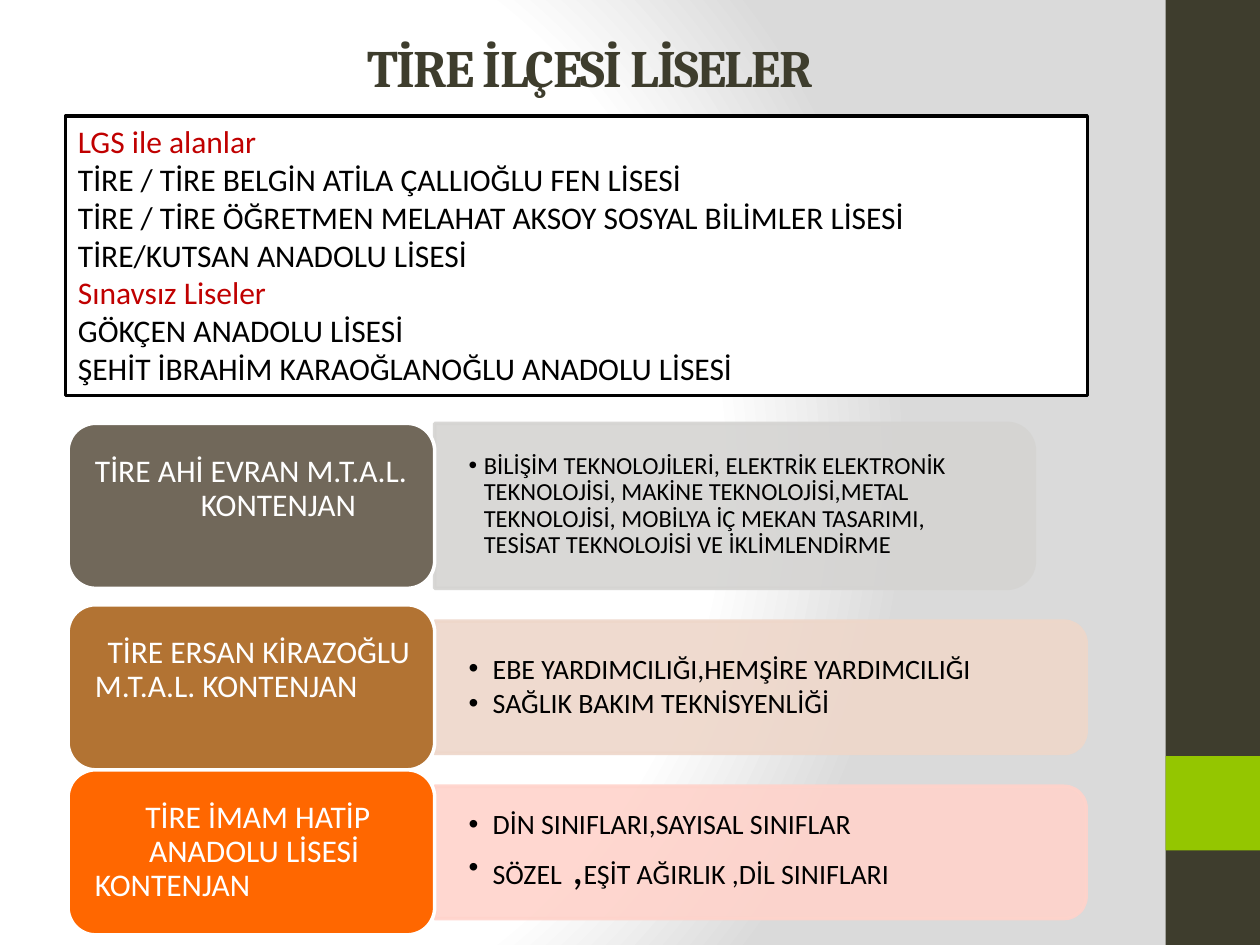
from lxml import etree
from pptx import Presentation
from pptx.dml.color import RGBColor
from pptx.enum.shapes import MSO_SHAPE as Kind
from pptx.enum.text import MSO_ANCHOR as Anchor, PP_ALIGN as Align
from pptx.oxml import parse_xml
from pptx.oxml.ns import nsdecls, qn
from pptx.util import Inches, Pt

WHITE = RGBColor(0xFF, 0xFF, 0xFF)
BLACK = RGBColor(0x00, 0x00, 0x00)
DARK = RGBColor(0x3E, 0x3D, 0x2D)
GREEN = RGBColor(0x94, 0xC6, 0x00)
RED = RGBColor(0xC0, 0x00, 0x00)
TAUPE = RGBColor(0x71, 0x68, 0x5A)
BROWN = RGBColor(0xB2, 0x73, 0x33)
ORANGE = RGBColor(0xFF, 0x67, 0x00)
GRAY = RGBColor(0xD5, 0xD4, 0xD2)
SAND = RGBColor(0xEE, 0xD7, 0xCA)
PINK = RGBColor(0xFF, 0xD3, 0xCB)

BACK = f"""<p:bg {nsdecls('p', 'a')}><p:bgPr><a:gradFill rotWithShape="1"><a:gsLst>
<a:gs pos="0"><a:srgbClr val="FFFFFF"/></a:gs>
<a:gs pos="75000"><a:srgbClr val="FFFFFF"/></a:gs>
<a:gs pos="100000"><a:srgbClr val="DADADA"/></a:gs></a:gsLst>
<a:path path="circle"><a:fillToRect l="20000" t="50000" r="100000" b="50000"/></a:path>
</a:gradFill><a:effectLst/></p:bgPr></p:bg>"""

# Lines of the upper box, with their colours
SCHOOLS = [
    ("LGS ile alanlar", RED),
    ("TİRE / TİRE BELGİN ATİLA ÇALLIOĞLU FEN LİSESİ", BLACK),
    ("TİRE / TİRE ÖĞRETMEN MELAHAT AKSOY SOSYAL BİLİMLER LİSESİ", BLACK),
    ("TİRE/KUTSAN ANADOLU LİSESİ", BLACK),
    ("Sınavsız Liseler", RED),
    ("GÖKÇEN ANADOLU LİSESİ", BLACK),
    ("ŞEHİT İBRAHİM KARAOĞLANOĞLU ANADOLU LİSESİ", BLACK),
]

# Card top, card colour, label lines with indents; panel colour, width, height,
# text size, bullet indent, items made of (text, size) runs
ROWS = [
    (3.36, TAUPE, [("TİRE AHİ EVRAN M.T.A.L.", 0), ("KONTENJAN", 0.84)],
     GRAY, 4.76, 1.31, 14, 0.12,
     [[("BİLİŞİM TEKNOLOJİLERİ, ELEKTRİK ELEKTRONİK TEKNOLOJİSİ, "
        "MAKİNE TEKNOLOJİSİ,METAL TEKNOLOJİSİ, MOBİLYA İÇ MEKAN TASARIMI, "
        "TESİSAT TEKNOLOJİSİ VE İKLİMLENDİRME", 14)]]),
    (4.8, BROWN, [("TİRE ERSAN KİRAZOĞLU", 0.1), ("M.T.A.L. KONTENJAN", 0)],
     SAND, 5.17, 1.05, 16, 0.19,
     [[("EBE YARDIMCILIĞI,HEMŞİRE YARDIMCILIĞI", 16)],
      [("SAĞLIK BAKIM TEKNİSYENLİĞİ", 16)]]),
    (6.11, ORANGE, [("TİRE İMAM HATİP", 0.4), ("ANADOLU LİSESİ", 0.43),
                    ("KONTENJAN", 0)],
     PINK, 5.17, 1.05, 16, 0.19,
     [[("DİN SINIFLARI,SAYISAL SINIFLAR", 16)],
      [("SÖZEL", 16), (" ,", 26), ("EŞİT AĞIRLIK ,DİL SINIFLARI", 16)]]),
]
CARD_X, CARD_W, CARD_H = 0.54, 2.91, 1.31
LINE_H = 0.27


class Deck:
    font = "Calibri"

    def __init__(self):
        self.prs = Presentation()
        self.prs.slide_width, self.prs.slide_height = Inches(10), Inches(7.5)
        self.slide = self.prs.slides.add_slide(self.prs.slide_layouts[5])
        self.slide.element.cSld.insert(0, parse_xml(BACK))

    def shape(self, kind, x, y, w, h, fill, line=None):
        item = self.slide.shapes.add_shape(
            kind, Inches(x), Inches(y), Inches(w), Inches(h))
        item.shadow.inherit = False
        item.fill.solid()
        item.fill.fore_color.rgb = fill
        if line is None:
            item.line.fill.background()
        else:
            item.line.color.rgb = line
            item.line.width = Pt(2)
        return item

    def frame(self, item, anchor, **margins):
        frame = item.text_frame
        looks = {"word_wrap": True, "vertical_anchor": anchor}
        looks.update({f"margin_{side}": Inches(gap)
                      for side, gap in margins.items()})
        for name, value in looks.items():
            setattr(frame, name, value)
        return frame

    def para(self, frame, first, runs, color, indent=0, **looks):
        para = frame.paragraphs[0] if first else frame.add_paragraph()
        for name, value in {"alignment": Align.LEFT, **looks}.items():
            setattr(para, name, value)
        para._p.get_or_add_pPr().set("marL", str(Inches(indent)))
        for text, size in runs:
            run = para.add_run()
            run.text = text
            style = {"name": self.font, "size": Pt(size)}
            for name, value in style.items():
                setattr(run.font, name, value)
            run.font.color.rgb = color
        return para

    def title(self, text):
        item = self.slide.shapes.title
        place = {"left": 0.52, "top": 0.14, "width": 8.33, "height": 0.77}
        for name, value in place.items():
            setattr(item, name, Inches(value))
        frame = self.frame(item, Anchor.MIDDLE)
        para = frame.paragraphs[0]
        para.alignment = Align.CENTER
        run = para.add_run()
        run.text = text
        style = {"name": "Cambria", "size": Pt(30), "bold": True}
        for name, value in style.items():
            setattr(run.font, name, value)
        run.font.color.rgb = DARK
        run.font._element.set("spc", "-100")

    def box(self, lines):
        item = self.shape(Kind.RECTANGLE, 0.52, 0.92, 8.11, 2.22, WHITE, BLACK)
        frame = self.frame(item, Anchor.TOP)
        for i, (text, color) in enumerate(lines):
            self.para(frame, i == 0, [(text, 18)], color)

    def panel(self, x, mid, w, h, fill):
        # Turned a quarter so that the round corners lie on the right
        item = self.shape(Kind.ROUND_2_SAME_RECTANGLE, x + (w - h) / 2,
                          mid - w / 2, h, w, fill, fill)
        item.rotation = 90
        for color in item.element.spPr.iter(qn("a:srgbClr")):
            etree.SubElement(color, qn("a:alpha")).set("val", "90000")

    def items(self, x, mid, w, h, indent, items):
        item = self.slide.shapes.add_textbox(
            Inches(x), Inches(mid - h / 2), Inches(w), Inches(h))
        frame = self.frame(item, Anchor.MIDDLE, left=0.27, right=0.27,
                           top=0.14, bottom=0.14)
        for i, runs in enumerate(items):
            para = self.para(frame, i == 0, runs, BLACK, indent,
                             line_spacing=0.9, space_after=Pt(2.4))
            props = para._p.pPr
            props.set("indent", str(-Inches(indent)))
            etree.SubElement(props, qn("a:buFont")).set("typeface", "Arial")
            etree.SubElement(props, qn("a:buChar")).set("char", "•")

    def card(self, y, fill, lines):
        item = self.shape(Kind.ROUNDED_RECTANGLE, CARD_X, y, CARD_W, CARD_H,
                          fill, WHITE)
        # Labels start on the same line, whether they have two or three
        low = 0.1 + LINE_H * (3 - len(lines))
        frame = self.frame(item, Anchor.MIDDLE, left=0.15, right=0.05,
                           top=0.1, bottom=low)
        for i, (text, indent) in enumerate(lines):
            self.para(frame, i == 0, [(text, 18)], WHITE, indent,
                      line_spacing=0.9)


def main():
    deck = Deck()
    # Side band
    deck.shape(Kind.RECTANGLE, 9.25, 0, 0.75, 7.5, DARK)
    deck.shape(Kind.RECTANGLE, 9.25, 6, 0.75, 0.75, GREEN)
    # Heading and list of schools
    deck.title("TİRE İLÇESİ LİSELER")
    deck.box(SCHOOLS)
    # Vocational schools with their fields
    x = CARD_X + CARD_W
    for top, fill, label, tint, w, h, size, indent, fields in ROWS:
        mid = top + CARD_H / 2
        deck.panel(x, mid, w, h, tint)
        deck.items(x, mid, w - 0.06, h - 0.12, indent, fields)
        deck.card(top, fill, label)
    deck.prs.save("out.pptx")


if __name__ == "__main__":
    main()
